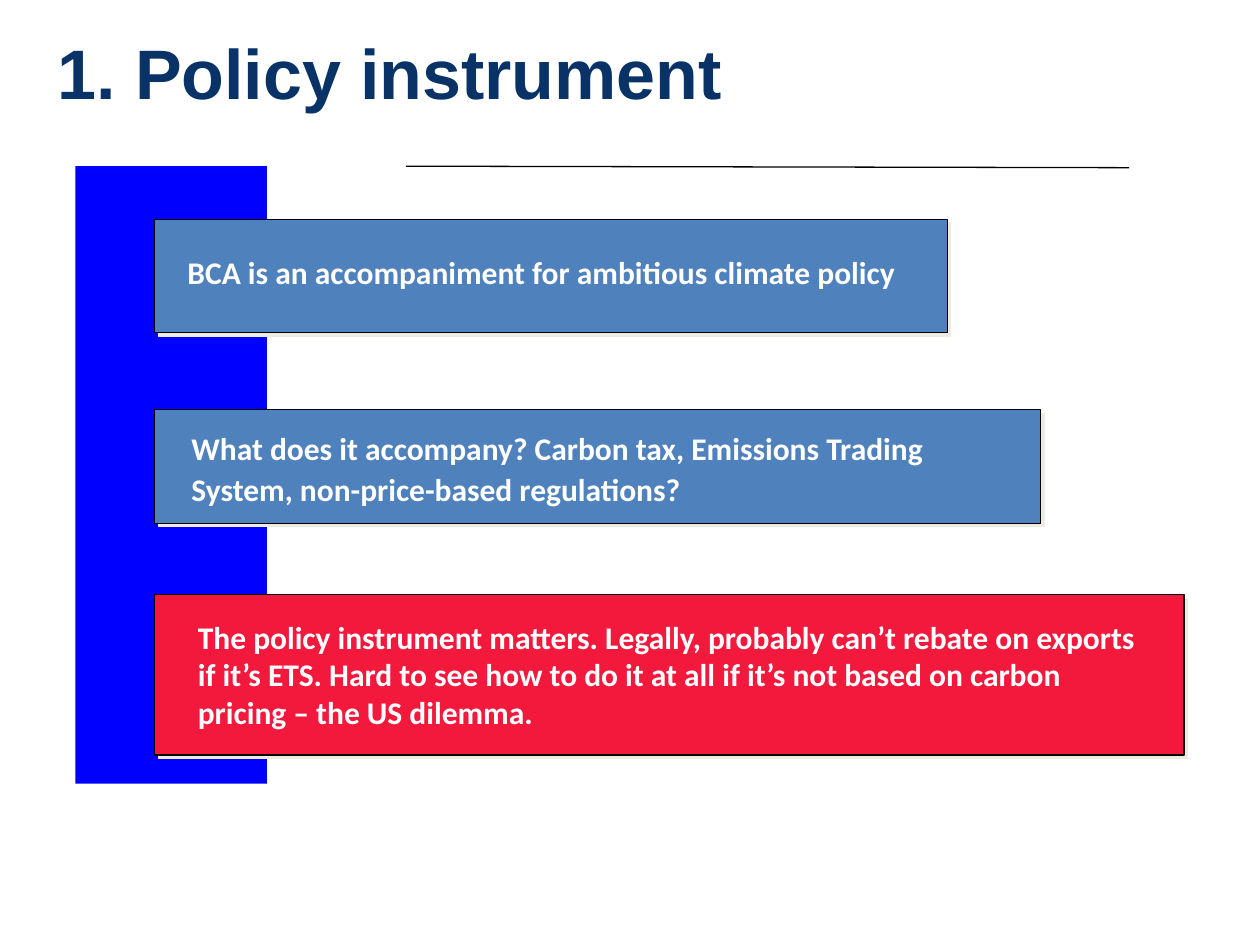
from lxml import etree
from pptx import Presentation
from pptx import util as u
from pptx.dml.color import RGBColor
from pptx.enum import shapes, text
from pptx.oxml import parse_xml
from pptx.oxml.ns import nsdecls, qn

COLORS = {"title": "093266", "bar": "0000FF", "blue": "4F81BD", "red": "F3193D",
          "line": "000000", "shadow": "EEECE1", "white": "FFFFFF"}


def add_text(parent, words, place, font="Calibri", size=18, color="white",
             inset=0, line_spacing=None, space_after=None):
    box = parent.shapes.add_textbox(*[u.Cm(length) for length in place])
    frame = box.text_frame
    frame.word_wrap = True
    frame.vertical_anchor = text.MSO_ANCHOR.MIDDLE
    frame.margin_left = frame.margin_right = u.Cm(inset)
    frame.margin_top = frame.margin_bottom = 0
    para = frame.paragraphs[0]
    if line_spacing:
        para.line_spacing = line_spacing
    if space_after:
        para.space_after = u.Pt(space_after)
    span = para.add_run()
    span.text = words
    span.font.name = font
    span.font.size = u.Pt(size)
    span.font.bold = True
    span.font.color.rgb = RGBColor.from_string(COLORS[color])


def add_rectangle(parent, place, color):
    box = parent.shapes.add_shape(shapes.MSO_SHAPE.RECTANGLE,
                                  *[u.Cm(length) for length in place])
    box.shadow.inherit = False
    box.fill.solid()
    box.fill.fore_color.rgb = RGBColor.from_string(COLORS[color])
    box.line.fill.background()
    return box


deck = Presentation()
deck.slide_width = u.Cm(25.4)
deck.slide_height = u.Cm(19.05)
page = deck.slides.add_slide(deck.slide_layouts[6])

add_text(page, "1. Policy instrument", (0.91, 1.04, 23.95, 0.81),
         font="Arial", size=40, color="title", inset=0.25)

add_rectangle(page, (1.52, 3.35, 3.86, 12.45), "bar")

rule = page.shapes.add_connector(shapes.MSO_CONNECTOR.STRAIGHT,
                                 u.Cm(8.18), u.Cm(3.35), u.Cm(22.76), u.Cm(3.38))
rule.line.color.rgb = RGBColor.from_string(COLORS["line"])
rule.line.width = u.Pt(0.75)
etree.SubElement(rule._element.spPr, qn("a:effectLst"))

panels = [
    ("BCA is an accompaniment for ambitious climate policy", "blue",
     (3.12, 4.42, 15.98, 2.29), (3.78, 4.42, 14.63, 2.11), {}),
    ("What does it accompany? Carbon tax, Emissions Trading System, "
     "non-price-based regulations?", "blue",
     (3.12, 8.26, 17.86, 2.29), (3.86, 8.36, 16.38, 2.11),
     {"line_spacing": 1.07, "space_after": 8}),
    ("The policy instrument matters. Legally, probably can’t rebate on exports "
     "if it’s ETS. Hard to see how to do it at all if it’s not based on carbon "
     "pricing – the US dilemma.", "red",
     (3.12, 11.99, 20.75, 3.23), (3.99, 12.12, 19.02, 2.95), {}),
]
for words, color, panel_place, text_place, spacing in panels:
    group = page.shapes.add_group_shape()
    panel = add_rectangle(group, panel_place, color)
    panel.line.color.rgb = RGBColor.from_string(COLORS["line"])
    panel.line.width = u.Pt(0.75)
    effects = panel._element.spPr.find(qn("a:effectLst"))
    effects.append(parse_xml(
        f'<a:outerShdw {nsdecls("a")} dist="{u.Pt(2.8)}" dir="2700000" algn="ctr" '
        f'rotWithShape="0"><a:srgbClr val="{COLORS["shadow"]}"/></a:outerShdw>'))
    add_text(group, words, text_place, **spacing)

deck.save("out.pptx")
